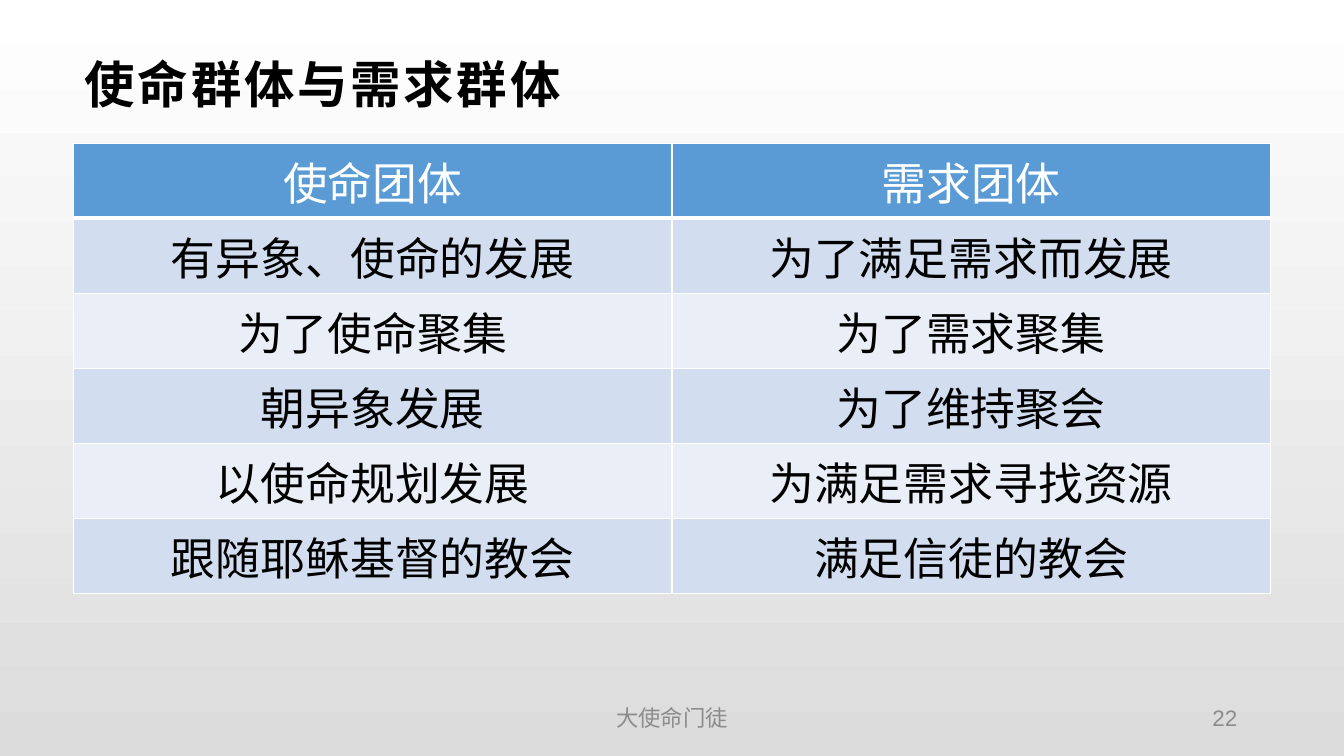
from dataclasses import dataclass

from lxml.etree import SubElement
from pptx import Presentation
from pptx.dml.color import RGBColor
from pptx.enum.text import MSO_ANCHOR, MSO_AUTO_SIZE, PP_ALIGN
from pptx.oxml.ns import qn
from pptx.util import Inches, Pt

BLACK = RGBColor(0x00, 0x00, 0x00)
WHITE = RGBColor(0xFF, 0xFF, 0xFF)
SILVER = RGBColor(0xDC, 0xDC, 0xDC)
GREY = RGBColor(0x8C, 0x8C, 0x8C)
BLUE = RGBColor(0x5B, 0x9B, 0xD5)
BAND_DARK = RGBColor(0xD2, 0xDE, 0xEF)
BAND_LIGHT = RGBColor(0xEA, 0xEF, 0xF7)

LEFT, WIDTH = 0.73, 11.87
ROW_HEIGHT = 0.74

ROWS = [
    ("使命团体", "需求团体"),
    ("有异象、使命的发展", "为了满足需求而发展"),
    ("为了使命聚集", "为了需求聚集"),
    ("朝异象发展", "为了维持聚会"),
    ("以使命规划发展", "为满足需求寻找资源"),
    ("跟随耶稣基督的教会", "满足信徒的教会"),
]


@dataclass
class FooterItem:
    text: str
    left: float
    width: float
    align: PP_ALIGN


FOOTER = [
    FooterItem("22", 9.42, 2.95, PP_ALIGN.RIGHT),
    FooterItem("大使命门徒", 4.5, 4.33, PP_ALIGN.CENTER),
]


def add_text(tf, text: str, size: int, color: RGBColor, align: PP_ALIGN):
    p = tf.paragraphs[0]
    p.alignment = align
    r = p.add_run()
    r.text = text
    r.font.name = "Arial"
    r.font.size = Pt(size)
    r.font.color.rgb = color
    return r


def set_background(s) -> None:
    fill = s.background.fill
    fill.gradient()
    fill.gradient_angle = 270
    for stop, color in zip(fill.gradient_stops, (WHITE, SILVER)):
        stop.color.rgb = color


def add_title(s) -> None:
    sp = s.shapes.title
    sp.left, sp.top = Inches(LEFT), Inches(0.47)
    sp.width, sp.height = Inches(WIDTH), Inches(0.71)
    tf = sp.text_frame
    tf.word_wrap = True
    tf.auto_size = MSO_AUTO_SIZE.NONE
    tf.vertical_anchor = MSO_ANCHOR.MIDDLE
    tf.margin_left, tf.margin_right = Inches(0.11), Inches(0.08)
    tf.margin_top = tf.margin_bottom = Inches(0.04)
    r = add_text(tf, "使命群体与需求群体", 36, BLACK, PP_ALIGN.LEFT)
    r.font.bold = True
    r.font._element.set("spc", "200")


def add_borders(cell, top: int, bottom: int) -> None:
    tc_pr = cell._tc.get_or_add_tcPr()
    for side, width in (("L", 1), ("R", 1), ("T", top), ("B", bottom)):
        ln = SubElement(tc_pr, qn(f"a:ln{side}"), w=str(Pt(width)))
        solid = SubElement(ln, qn("a:solidFill"))
        SubElement(solid, qn("a:srgbClr"), val=str(WHITE))


def add_comparison(s) -> None:
    frame = s.shapes.add_table(
        len(ROWS), 2, Inches(LEFT), Inches(1.42),
        Inches(WIDTH), Inches(ROW_HEIGHT * len(ROWS)),
    )
    for i, texts in enumerate(ROWS):
        header = i == 0
        band = BAND_DARK if i % 2 else BAND_LIGHT
        for j, text in enumerate(texts):
            cell = frame.table.cell(i, j)
            add_borders(cell, 3 if i == 1 else 1, 3 if header else 1)
            cell.fill.solid()
            cell.fill.fore_color.rgb = BLUE if header else band
            r = add_text(cell.text_frame, text, 32,
                         WHITE if header else BLACK, PP_ALIGN.CENTER)
            r.font.bold = False


def add_footer(s, item: FooterItem) -> None:
    sp = s.shapes.add_textbox(Inches(item.left), Inches(6.94),
                              Inches(item.width), Inches(0.35))
    tf = sp.text_frame
    tf.word_wrap = True
    tf.vertical_anchor = MSO_ANCHOR.MIDDLE
    add_text(tf, item.text, 16, GREY, item.align)


def main() -> None:
    prs = Presentation()
    prs.slide_width, prs.slide_height = Inches(13.33), Inches(7.5)
    s = prs.slides.add_slide(prs.slide_layouts.get_by_name("Title Only"))
    set_background(s)
    add_title(s)
    add_comparison(s)
    for item in FOOTER:
        add_footer(s, item)
    prs.save("out.pptx")


if __name__ == "__main__":
    main()
